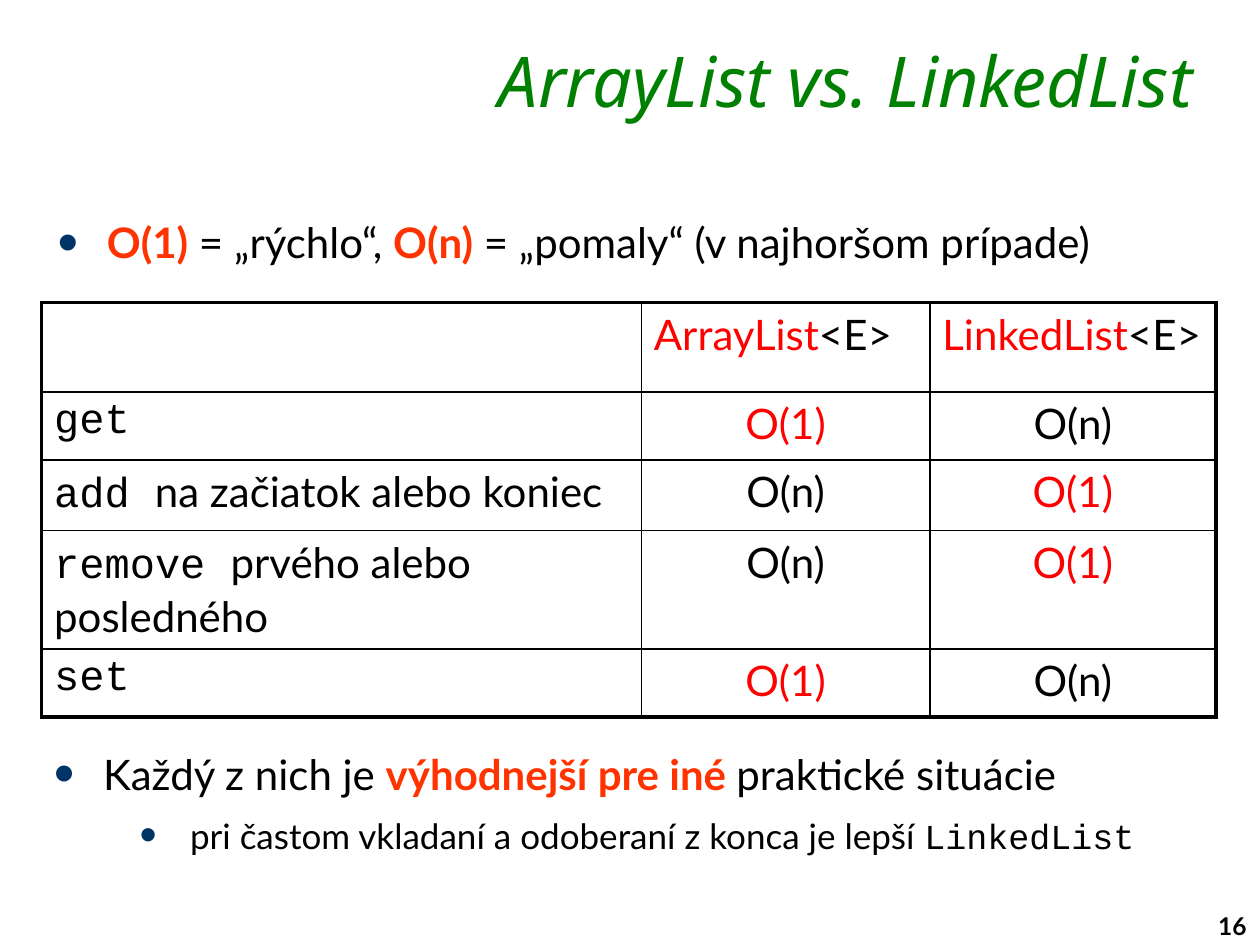
"""Build the slide that compares the speed of ArrayList and LinkedList."""

from dataclasses import dataclass

from lxml.etree import SubElement
from pptx import Presentation
from pptx.dml.color import RGBColor
from pptx.enum.text import MSO_ANCHOR, PP_ALIGN
from pptx.oxml.ns import qn
from pptx.util import Inches, Pt

PAGE_WIDTH = Inches(10)
PAGE_HEIGHT = Inches(7.5)


@dataclass(frozen=True)
class Theme:
    """Colours, fonts, type sizes and line widths of the slide."""

    ink: str = "000000"
    title: str = "008000"
    accent: str = "FF3300"
    fast: str = "FF0000"
    bullet: str = "003366"
    body_font: str = "Lato"
    title_font: str = "Noto Sans"
    code_font: str = "Courier New"
    title_size: int = 40
    body_size: int = 24
    detail_size: int = 20
    number_size: int = 14
    outer_line: float = 2.25
    inner_line: float = 1
    spacing: float = 0.2


THEME = Theme()


@dataclass(frozen=True)
class Area:
    """A rectangle in percent of the slide's width and height."""

    left: float
    top: float
    width: float
    height: float

    def lengths(self) -> tuple[int, int, int, int]:
        """Return left, top, width and height as slide lengths."""
        return (across(self.left), down(self.top), across(self.width), down(self.height))


@dataclass(frozen=True)
class Span:
    """A stretch of text with one look."""

    text: str
    color: str = THEME.ink
    font: str = THEME.body_font
    bold: bool = False
    italic: bool = False


@dataclass(frozen=True)
class Bullet:
    """Bullet level with text and hanging indents in inches."""

    level: int
    margin: float
    hang: float


@dataclass(frozen=True)
class Para:
    """A paragraph of spans."""

    spans: tuple[Span, ...]
    size: int = THEME.body_size
    align: PP_ALIGN = PP_ALIGN.LEFT
    bullet: Bullet | None = None


def across(percent: float) -> int:
    """Convert percent of the slide's width to a length."""
    return round(PAGE_WIDTH * percent / 100)


def down(percent: float) -> int:
    """Convert percent of the slide's height to a length."""
    return round(PAGE_HEIGHT * percent / 100)


def add_bullet(paragraph, bullet: Bullet) -> None:
    """Give a paragraph a round bullet and a hanging indent."""
    paragraph.level = bullet.level
    properties = paragraph._p.get_or_add_pPr()
    properties.set("marL", str(Inches(bullet.margin)))
    properties.set("indent", str(-Inches(bullet.hang)))
    color = SubElement(properties, qn("a:buClr"))
    SubElement(color, qn("a:srgbClr"), val=THEME.bullet)
    SubElement(properties, qn("a:buSzPct"), val="140000")
    SubElement(properties, qn("a:buFont"), typeface="Arial")
    SubElement(properties, qn("a:buChar"), char="•")


def style_font(font, span: Span) -> None:
    """Apply the look of a span to a font."""
    font.name = span.font
    font.bold = span.bold
    font.italic = span.italic
    font.color.rgb = RGBColor.from_string(span.color)


def write(frame, paras: tuple[Para, ...]) -> None:
    """Fill a text frame with paragraphs."""
    for index, para in enumerate(paras):
        paragraph = frame.add_paragraph() if index else frame.paragraphs[0]
        paragraph.alignment = para.align
        paragraph.space_before = Pt(para.size * THEME.spacing if index else 0)
        paragraph.space_after = Pt(para.size * THEME.spacing)
        if para.bullet:
            add_bullet(paragraph, para.bullet)
        paragraph.font.size = Pt(para.size)
        looks = {(span.color, span.font, span.bold, span.italic) for span in para.spans}
        if len(looks) == 1:
            style_font(paragraph.font, para.spans[0])
        for span in para.spans:
            run = paragraph.add_run()
            run.text = span.text
            if len(looks) > 1:
                style_font(run.font, span)


def add_text(page, area: Area, *paras: Para, inset_top: float = 0.05) -> None:
    """Add a wrapping text box anchored at the top."""
    frame = page.shapes.add_textbox(*area.lengths()).text_frame
    frame.word_wrap = True
    frame.vertical_anchor = MSO_ANCHOR.TOP
    frame.margin_top = Inches(inset_top)
    write(frame, paras)


def add_border(cell, side: str, width: float) -> None:
    """Draw one side of a table cell."""
    properties = cell._tc.get_or_add_tcPr()
    line = SubElement(properties, qn(f"a:ln{side}"), w=str(Pt(width)))
    fill = SubElement(line, qn("a:solidFill"))
    SubElement(fill, qn("a:srgbClr"), val=THEME.ink)


def add_grid(page, area: Area, columns: tuple[float, ...], rows: tuple[float, ...],
             content: list[tuple[Para, ...]]) -> None:
    """Add a table with a heavy frame and thin inner lines."""
    table = page.shapes.add_table(len(rows), len(columns), *area.lengths()).table
    for column, width in zip(table.columns, columns):
        column.width = across(width)
    for row, height in zip(table.rows, rows):
        row.height = down(height)
    for y, paras in enumerate(content):
        for x, para in enumerate(paras):
            cell = table.cell(y, x)
            outer = {"L": x == 0, "R": x == len(columns) - 1,
                     "T": y == 0, "B": y == len(rows) - 1}
            for side, heavy in outer.items():
                add_border(cell, side, THEME.outer_line if heavy else THEME.inner_line)
            cell.fill.background()
            write(cell.text_frame, (para,))


def heading(name: str) -> Para:
    """Return the column heading of a generic list class."""
    return Para((Span(name, THEME.fast), Span("<E>")))


def cost(text: str) -> Para:
    """Return a centred complexity, highlighted when constant."""
    color = THEME.fast if text == "O(1)" else THEME.ink
    return Para((Span(text, color),), align=PP_ALIGN.CENTER)


def operation(code: str, detail: str = "") -> Para:
    """Return a method name with an optional explanation."""
    spans = (Span(code, font=THEME.code_font), Span(detail))
    return Para(spans if detail else spans[:1])


def main() -> None:
    """Build and save the deck."""
    deck = Presentation()
    deck.slide_width, deck.slide_height = PAGE_WIDTH, PAGE_HEIGHT
    page = deck.slides.add_slide(deck.slide_layouts[6])
    point, detail = Bullet(0, 0.39, 0.39), Bullet(1, 1.08, 0.4)

    add_text(page, Area(95.7, 95.73, 5.1, 4.4),
             Para((Span("16", bold=True),), THEME.number_size))
    title = Span("ArrayList vs. LinkedList", THEME.title, THEME.title_font, italic=True)
    add_text(page, Area(20.1, 3.73, 75.5, 7.73),
             Para((title,), THEME.title_size, PP_ALIGN.RIGHT), inset_top=0.02)
    add_text(page, Area(3.6, 22.27, 92.2, 16.53), Para((
        Span("O(1)", THEME.accent, bold=True), Span(" = „rýchlo“, "),
        Span("O(n)", THEME.accent, bold=True),
        Span(" = „pomaly“ (v najhoršom prípade)")), bullet=point))
    add_grid(page, Area(3.3, 32, 93.2, 43.87), (47.6, 22.9, 22.7),
             (9.47, 7.2, 7.47, 12.53, 7.2), [
        (Para(()), heading("ArrayList"), heading("LinkedList")),
        (operation("get"), cost("O(1)"), cost("O(n)")),
        (operation("add ", "na začiatok alebo koniec"), cost("O(n)"), cost("O(1)")),
        (operation("remove ", "prvého alebo posledného"), cost("O(n)"), cost("O(1)")),
        (operation("set"), cost("O(1)"), cost("O(n)")),
    ])
    add_text(page, Area(3.3, 78.53, 92.5, 8.8), Para((
        Span("Každý z nich je "), Span("výhodnejší pre iné ", THEME.accent, bold=True),
        Span("praktické situácie")), bullet=point), Para((
            Span("pri častom vkladaní a odoberaní z konca je lepší "),
            Span("LinkedList", font=THEME.code_font)), THEME.detail_size, bullet=detail))
    deck.save("out.pptx")


if __name__ == "__main__":
    main()
